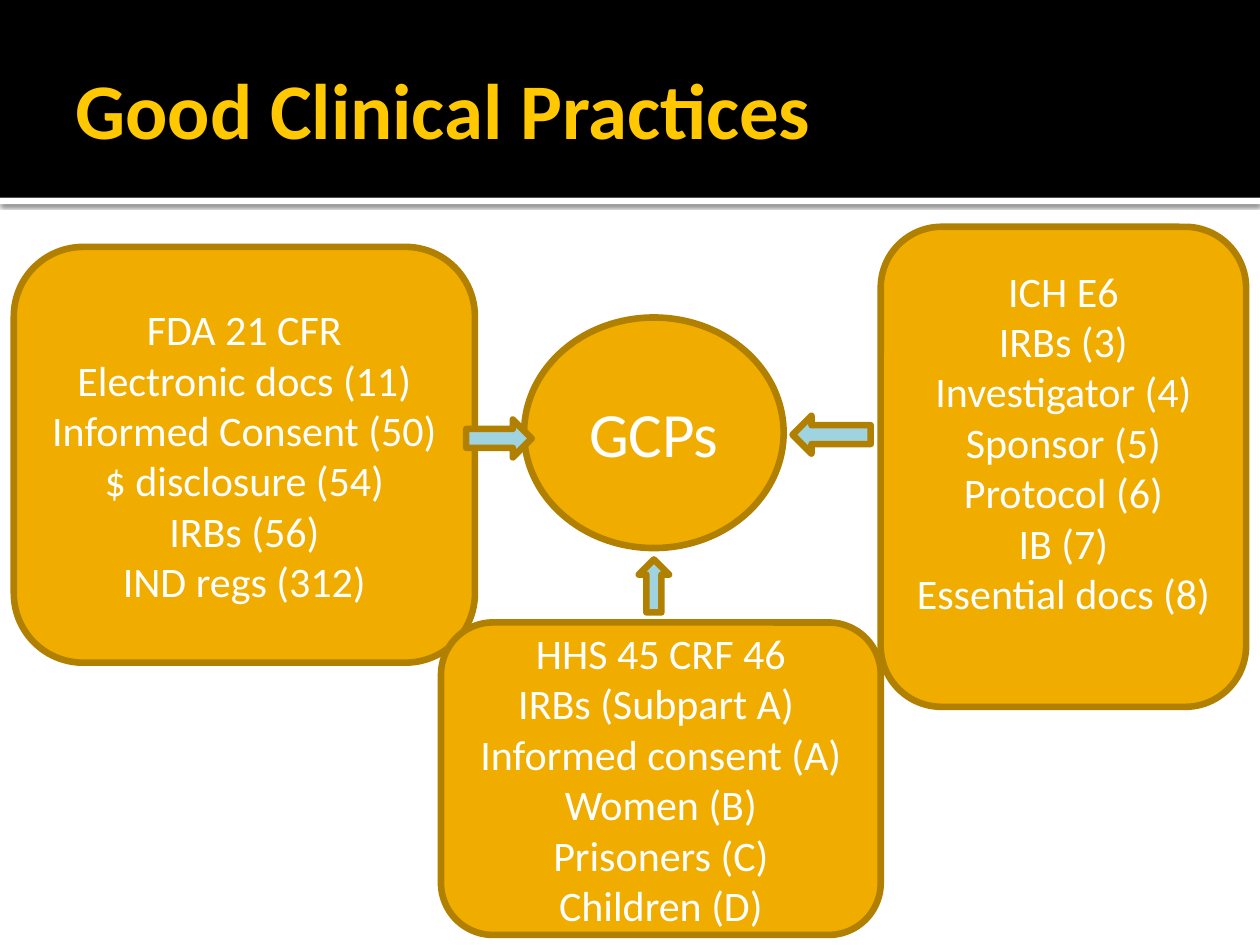
from lxml import etree
from pptx import Presentation
from pptx.dml.color import RGBColor
from pptx.enum.shapes import MSO_SHAPE
from pptx.enum.text import MSO_ANCHOR, PP_ALIGN
from pptx.oxml.ns import qn
from pptx.util import Inches, Pt

RECT, ROUND, OVAL = MSO_SHAPE.RECTANGLE, MSO_SHAPE.ROUNDED_RECTANGLE, MSO_SHAPE.OVAL
RIGHT, LEFT, UP = MSO_SHAPE.RIGHT_ARROW, MSO_SHAPE.LEFT_ARROW, MSO_SHAPE.UP_ARROW
MIDDLE = MSO_ANCHOR.MIDDLE
ALIGN_LEFT, ALIGN_CENTER = PP_ALIGN.LEFT, PP_ALIGN.CENTER

THEME = {
    "font": "Calibri", "title_size": 45, "hub_size": 36, "body_size": 24,
    "title": "FFC800", "text": "FFFFFF", "band": "000000", "strip": "FFFFFF",
    "box": "F0AD00", "edge": "B28000", "arrow": "A0D3E0", "edge_width": 3.78,
}

# Content: places are (left, top, width, height) on a grid of 100 by 75 cells
COLUMNS = 100
TITLE = "Good Clinical Practices"
TITLE_PLACE = (5, 1.7, 90, 13.7)
BAND_HEIGHT, STRIP_HEIGHT = 15.7, 0.5

# Shape, place, lines, type size, bottom margin in inches
NODES = [
    (ROUND, (1.1, 19.6, 36.6, 33),
     ["FDA 21 CFR", "Electronic docs (11)", "Informed Consent (50)",
      "$ disclosure (54)", "IRBs (56)", "IND regs (312)"], "body_size", 0.05),
    (ROUND, (69.9, 18, 29, 38.1),
     ["ICH E6", "IRBs (3)", "Investigator (4)", "Sponsor (5)",
      "Protocol (6)", "IB (7)", "Essential docs (8)"], "body_size", 0.45),
    (OVAL, (41.6, 25.2, 20.6, 18.3), ["GCPs"], "hub_size", 0.05),
    (ROUND, (35, 49.4, 34.9, 24.8),
     ["HHS 45 CRF 46", "IRBs (Subpart A) ", "Informed consent (A)",
      "Women (B)", "Prisoners (C)", "Children (D)"], "body_size", 0.05),
]
ARROWS = [
    (RIGHT, (37, 33.3, 5.2, 3)),
    (LEFT, (62.9, 33, 6.2, 3)),
    (UP, (50.7, 44.4, 2.4, 4.2)),
]

deck = Presentation()
deck.slide_width, deck.slide_height = Inches(10), Inches(7.5)
page = deck.slides.add_slide(deck.slide_layouts[6])


def on_grid(place):
    return [round(cells * deck.slide_width / COLUMNS) for cells in place]


def color(name):
    return RGBColor.from_string(THEME[name])


def add_block(kind, place, fill, edge=None):
    box = page.shapes.add_shape(kind, *on_grid(place))
    box.shadow.inherit = False
    box.fill.solid()
    box.fill.fore_color.rgb = color(fill)
    if edge:
        box.line.color.rgb = color(edge)
        box.line.width = Pt(THEME["edge_width"])
    else:
        box.line.fill.background()
    return box


def write(box, lines, size="body_size", ink="text", align=ALIGN_CENTER,
          bold=False, right=0.1, bottom=0.05):
    frame = box.text_frame
    frame.word_wrap = True
    frame.vertical_anchor = MIDDLE
    frame.margin_left, frame.margin_right = Inches(0.1), Inches(right)
    frame.margin_top, frame.margin_bottom = Inches(0.05), Inches(bottom)
    for index, line in enumerate(lines):
        para = frame.add_paragraph() if index else frame.paragraphs[0]
        para.alignment = align
        span = para.add_run()
        span.text = line
        span.font.name = THEME["font"]
        span.font.size = Pt(THEME[size])
        span.font.bold = bold
        span.font.color.rgb = color(ink)


def add_shadow(box, blur, distance, opacity):
    effects = box._element.spPr.find(qn("a:effectLst"))
    shadow = etree.SubElement(effects, qn("a:outerShdw"), blurRad=str(Pt(blur)),
                              dist=str(Pt(distance)), dir=str(90 * 60000),
                              algn="t", rotWithShape="0")
    tint = etree.SubElement(shadow, qn("a:srgbClr"), val=THEME["band"])
    etree.SubElement(tint, qn("a:alpha"), val=str(opacity * 1000))


# Header: shadowed strip, band and title
strip = add_block(RECT, (0, BAND_HEIGHT, COLUMNS, STRIP_HEIGHT), "strip")
add_shadow(strip, blur=2.5, distance=0.8, opacity=60)
add_block(RECT, (0, 0, COLUMNS, BAND_HEIGHT), "band")
title = page.shapes.add_textbox(*on_grid(TITLE_PLACE))
write(title, [TITLE], size="title_size", ink="title", align=ALIGN_LEFT,
      bold=True, right=0.05)

# Regulations around the hub
for kind, place, lines, size, bottom in NODES:
    write(add_block(kind, place, "box", "edge"), lines, size=size, bottom=bottom)

# Arrows towards the hub
for kind, place in ARROWS:
    add_block(kind, place, "arrow", "edge")

deck.save("out.pptx")
